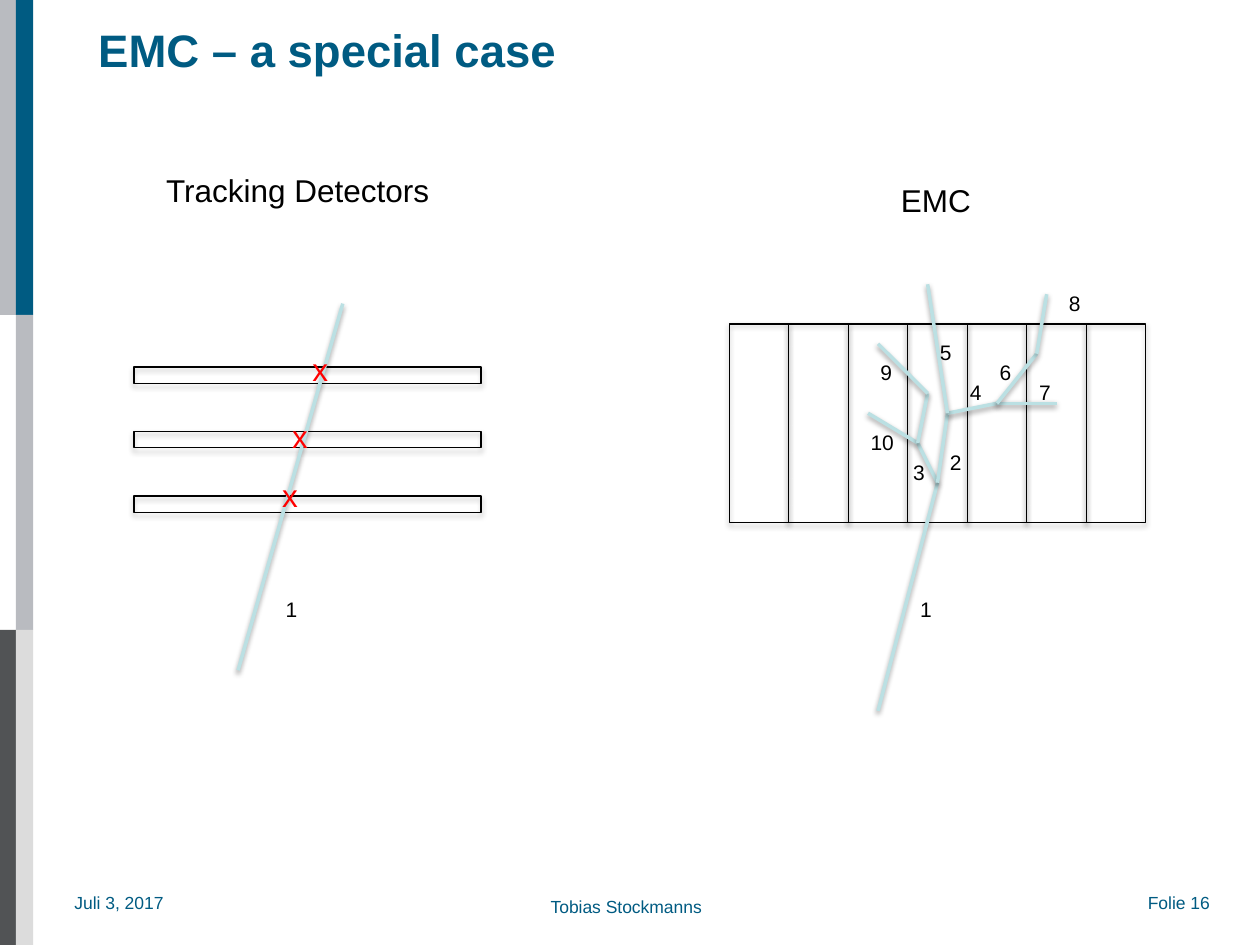
from pptx import Presentation
from pptx.dml.color import RGBColor
from pptx.enum.shapes import MSO_CONNECTOR, MSO_SHAPE
from pptx.enum.text import MSO_ANCHOR, PP_ALIGN
from pptx.oxml import parse_xml
from pptx.oxml.ns import nsdecls
from pptx.util import Cm, Pt

BLUE = RGBColor(0x00, 0x5B, 0x82)
GREY = RGBColor(0xB9, 0xBB, 0xC0)
DARK_GREY = RGBColor(0x51, 0x53, 0x55)
LIGHT_GREY = RGBColor(0xDC, 0xDC, 0xDC)
TRACK = RGBColor(0xBB, 0xE0, 0xE3)
BLACK = RGBColor(0x00, 0x00, 0x00)
RED = RGBColor(0xFF, 0x00, 0x00)

presentation = Presentation()
presentation.slide_width, presentation.slide_height = Cm(25.4), Cm(19.05)
slide = presentation.slides.add_slide(presentation.slide_layouts[5])


def add_shadow(shape, distance, opacity):
    """Give the shape a soft black shadow falling straight down."""
    shape._element.spPr.append(parse_xml(
        f'<a:effectLst {nsdecls("a")}>'
        f'<a:outerShdw blurRad="{Pt(3.1)}" dist="{Pt(distance)}" dir="5400000" rotWithShape="0">'
        f'<a:srgbClr val="000000"><a:alpha val="{opacity * 1000}"/></a:srgbClr>'
        '</a:outerShdw></a:effectLst>'))


def add_text(text, left, top, width, height, size, color=BLACK, inset=True):
    box = slide.shapes.add_textbox(Cm(left), Cm(top), Cm(width), Cm(height))
    frame = box.text_frame
    frame.word_wrap = True
    if not inset:
        frame.margin_left = frame.margin_right = frame.margin_top = frame.margin_bottom = 0
    frame.text = text
    font = frame.paragraphs[0].runs[0].font
    font.name, font.size, font.color.rgb = "Arial", Pt(size), color


# Side bars
for left, row, color in [(0, 0, GREY), (0, 2, DARK_GREY),
                         (0.32, 0, BLUE), (0.32, 1, GREY), (0.32, 2, LIGHT_GREY)]:
    bar = slide.shapes.add_shape(MSO_SHAPE.RECTANGLE, Cm(left), Cm(row * 6.35), Cm(0.35), Cm(6.35))
    bar.shadow.inherit = False
    bar.fill.solid()
    bar.fill.fore_color.rgb = color
    bar.line.fill.background()

# Footer
for text, left, top, width in [("Juli 3, 2017", 1.5, 17.98, 2.16),
                               ("Folie 16", 23.14, 17.98, 1.57),
                               ("Tobias Stockmanns", 11.1, 18.06, 3.2)]:
    add_text(text, left, top, width, 0.43, 10, BLUE, inset=False)

# Title
title = slide.shapes.title
title.left, title.top, title.width, title.height = Cm(1.98), Cm(0.2), Cm(18.47), Cm(1.57)
frame = title.text_frame
frame.margin_left = frame.margin_right = frame.margin_top = frame.margin_bottom = 0
frame.vertical_anchor = MSO_ANCHOR.MIDDLE
frame.text = "EMC – a special case"
frame.paragraphs[0].alignment = PP_ALIGN.LEFT
font = frame.paragraphs[0].runs[0].font
font.name, font.size, font.bold, font.color.rgb = "Arial", Pt(26), True, BLUE

# Detector outlines: seven EMC crystals and three tracking layers
crystals = [(14.7 + 1.2 * column, 6.53, 1.2, 4) for column in range(7)]
layers = [(2.7, 7.4 + 1.3 * row, 7, 0.33) for row in range(3)]
for left, top, width, height in crystals + layers:
    outline = slide.shapes.add_shape(MSO_SHAPE.RECTANGLE, Cm(left), Cm(top), Cm(width), Cm(height))
    outline.fill.background()
    outline.line.color.rgb = BLACK
    outline.line.width = Pt(0.75)
    add_shadow(outline, 1.8, 35)

# Particle tracks: the EMC shower tree, then the single straight track
shower_start = (18.9, 9.73)
left_fork, left_bend = (18.5, 8.93), (18.7, 7.93)
middle_fork, right_fork, upper_fork = (19.1, 8.33), (20.1, 8.13), (20.9, 7.13)
tracks = [
    ((17.7, 14.33), shower_start),
    (shower_start, left_fork),
    (shower_start, middle_fork),
    (middle_fork, right_fork),
    (middle_fork, (18.7, 5.73)),
    (right_fork, (21.3, 8.13)),
    (right_fork, upper_fork),
    (upper_fork, (21.1, 5.93)),
    (left_fork, (17.5, 8.33)),
    (left_fork, left_bend),
    (left_bend, (17.7, 6.93)),
    ((4.8, 13.51), (6.91, 6.12)),
]
for start, end in tracks:
    track = slide.shapes.add_connector(MSO_CONNECTOR.STRAIGHT, *map(Cm, start + end))
    track.line.color.rgb = TRACK
    track.line.width = Pt(2)
    add_shadow(track, 1.6, 38)

# Track numbers
for text, left, top in [("1", 18.3, 11.91), ("2", 18.9, 8.93), ("3", 18.16, 9.14),
                        ("4", 19.3, 7.53), ("5", 18.7, 6.73), ("6", 19.9, 7.13),
                        ("7", 20.7, 7.53), ("8", 21.3, 5.73), ("9", 17.5, 7.13),
                        ("10", 17.3, 8.53), ("1", 5.51, 11.91)]:
    add_text(text, left, top, 0.76 if len(text) == 1 else 1.05, 0.76, 12)

# Hits on the tracking layers
for left, top in [(5.44, 9.47), (5.64, 8.28), (6.05, 6.93)]:
    add_text("x", left, top, 1.45, 1.65, 18, RED)

# Headings
add_text("Tracking Detectors", 3.1, 3.33, 6, 1.02, 18)
add_text("EMC", 17.91, 3.53, 2, 1.02, 18)

presentation.save("out.pptx")
